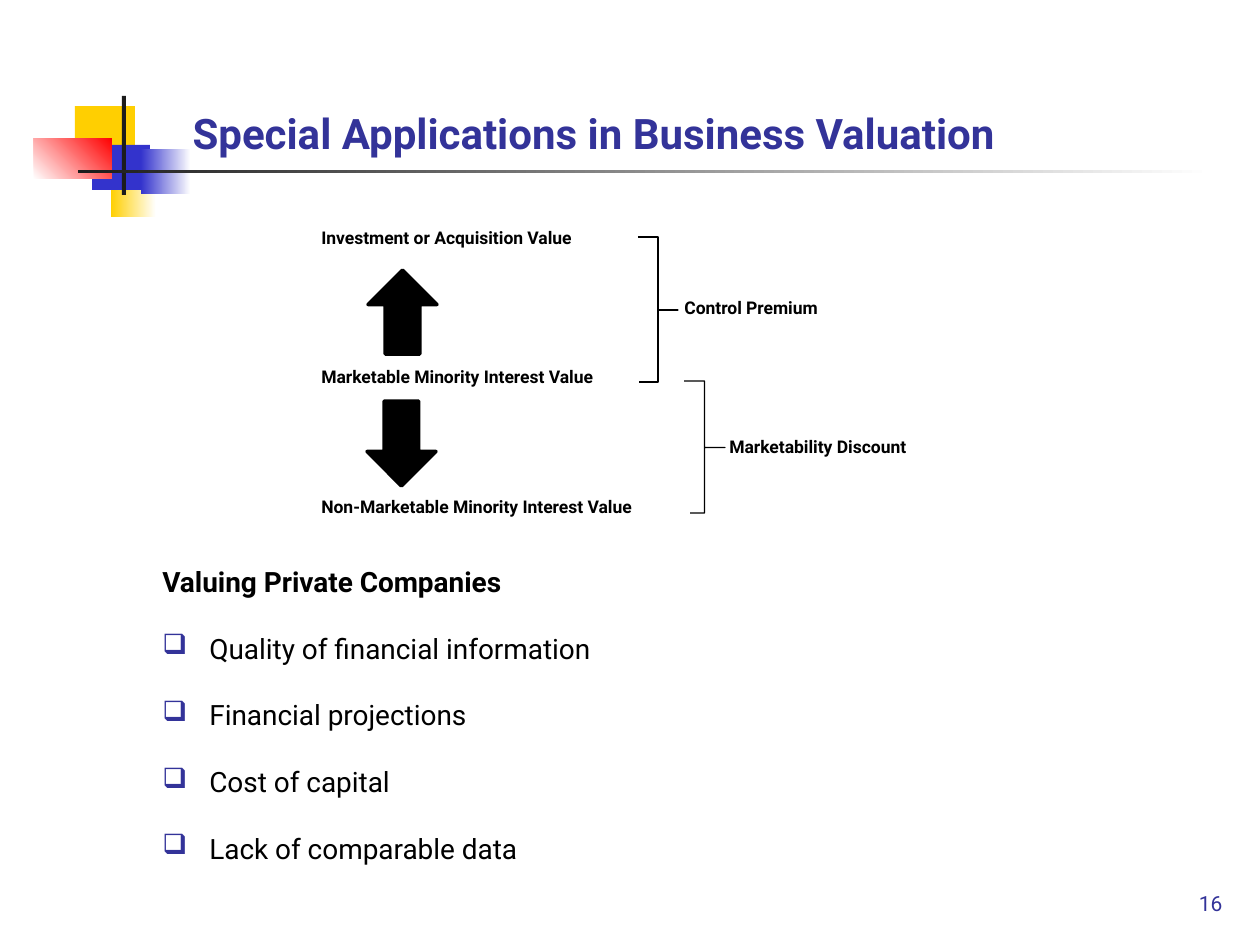
from lxml import etree
from pptx import Presentation
from pptx.dml.color import RGBColor
from pptx.enum.shapes import MSO_SHAPE
from pptx.enum.text import MSO_ANCHOR, PP_ALIGN
from pptx.oxml.ns import qn
from pptx.util import Emu, Pt

RECT, BRACE, ARROW = MSO_SHAPE.RECTANGLE, MSO_SHAPE.RIGHT_BRACE, MSO_SHAPE.DOWN_ARROW
TOP, BOTTOM = MSO_ANCHOR.TOP, MSO_ANCHOR.BOTTOM
LEFT, RIGHT = PP_ALIGN.LEFT, PP_ALIGN.RIGHT
PX = 914400 / 126
COLORS = {
    "white": "FFFFFF", "black": "000000", "navy": "333399", "blue": "3333CC",
    "gold": "FFCF01", "red": "FF0000", "charcoal": "1C1C1C",
}
RGB = {name: RGBColor.from_string(value) for name, value in COLORS.items()}


def add_block(kind, box, fill=None, line=None, weight=0.75):
    block = slide.shapes.add_shape(kind, *[Emu(round(v * PX)) for v in box])
    block.shadow.inherit = False
    if fill is None:
        block.fill.background()
    elif isinstance(fill, tuple):
        start, end, angle = fill
        block.fill.gradient()
        block.fill.gradient_angle = angle
        for stop, color in zip(block.fill.gradient_stops, (start, end)):
            stop.color.rgb = RGB[color]
    else:
        block.fill.solid()
        block.fill.fore_color.rgb = RGB[fill]
    if line:
        block.line.color.rgb = RGB[line]
        block.line.width = Pt(weight)
    else:
        block.line.fill.background()
    return block


def write(frame, lines, size, color="black", bold=False, align=LEFT, anchor=TOP):
    frame.word_wrap = True
    frame.vertical_anchor = anchor
    for number, line in enumerate(lines):
        paragraph = frame.add_paragraph() if number else frame.paragraphs[0]
        paragraph.alignment = align
        run = paragraph.add_run()
        run.text = line
        run.font.color.rgb = RGB[color]
        formats = {"name": "Roboto", "size": Pt(size), "bold": bold}
        for key, value in formats.items():
            setattr(run.font, key, value)


prs = Presentation()
prs.slide_width, prs.slide_height = Emu(round(1260 * PX)), Emu(round(945 * PX))
slide = prs.slides.add_slide(prs.slide_layouts[5])

ornament = [
    ((111, 151, 45, 66), ("gold", "white", 0)),
    ((75, 106, 60, 44), "gold"),
    ((92, 145, 58, 45), "blue"),
    ((141, 149, 50, 45), ("blue", "white", 0)),
    ((34, 138, 78, 41), ("white", "red", 45)),
    ((122, 96, 4, 99), "charcoal"),
    ((78, 170, 1134, 3), ("charcoal", "white", 0)),
]
for box, fill in ornament:
    add_block(RECT, box, fill)

title = slide.shapes.title
title_box = {"left": 180, "top": 86, "width": 961, "height": 78}
for side, length in title_box.items():
    setattr(title, side, Emu(round(length * PX)))
write(title.text_frame, ["Special Applications in Business Valuation"], 24, "navy", True, anchor=BOTTOM)

for box in [(638, 237, 40, 145), (684, 381, 41, 132)]:
    brace = add_block(BRACE, box, line="black")
    brace.adjustments[0] = 0
    brace.adjustments[1] = 0.504

for box, rotation in [((368, 270, 69, 84), 180), ((367, 401, 69, 85), 0)]:
    arrow = add_block(ARROW, box, "black", "black", 2)
    arrow.rotation = rotation

value_levels = [
    ("Investment or Acquisition Value", (309, 221, 317, 41)),
    ("Marketable Minority Interest Value", (309, 360, 329, 37)),
    ("Non-Marketable Minority Interest Value", (309, 490, 380, 40)),
]
for level, box in value_levels:
    write(add_block(RECT, box, "white", "white").text_frame, [level], 10, bold=True)

topics = [
    "Valuing Private Companies",
    "Quality of financial information",
    "Financial projections",
    "Cost of capital",
    "Lack of comparable data",
]
texts = [
    (["Control Premium"], (672, 291, 297, 37), {"size": 10, "bold": True}),
    (["Marketability Discount"], (717, 430, 227, 37), {"size": 10, "bold": True}),
    (["16"], (948, 859, 287, 63), {"size": 12, "color": "navy", "align": RIGHT, "anchor": BOTTOM}),
    (topics, (150, 558, 881, 357), {"size": 16}),
]
for lines, box, style in texts:
    frame = slide.shapes.add_textbox(*[Emu(round(v * PX)) for v in box]).text_frame
    write(frame, lines, **style)

heading, *bullets = frame.paragraphs
heading.runs[0].font.bold = True
indent = round(47 * PX)
for bullet in bullets:
    bullet.space_before = Pt(19)
    properties = bullet._p.get_or_add_pPr()
    properties.set("marL", str(indent))
    properties.set("indent", str(-indent))
    bullet_color = etree.SubElement(properties, qn("a:buClr"))
    etree.SubElement(bullet_color, qn("a:srgbClr"), val=COLORS["navy"])
    etree.SubElement(properties, qn("a:buChar"), char="❑")

prs.save("out.pptx")
